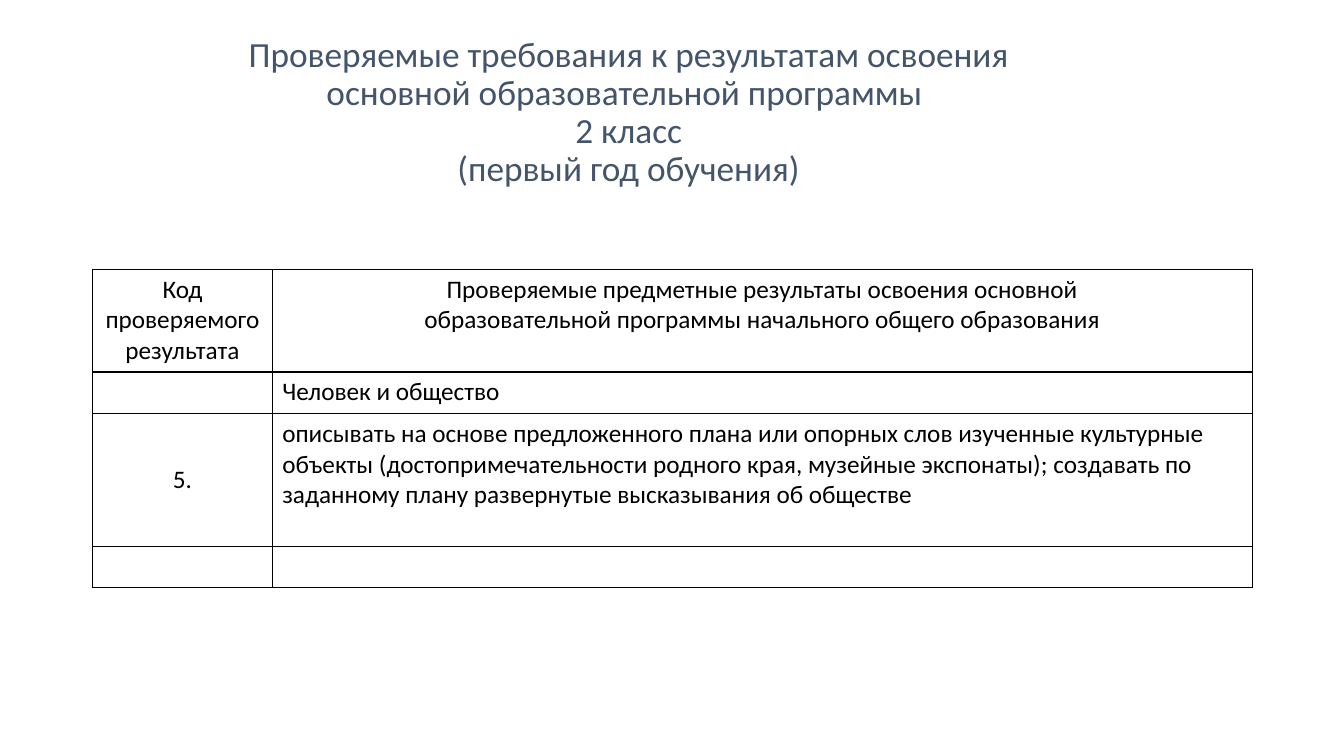
from dataclasses import dataclass

from lxml.etree import SubElement as Sub
from pptx import Presentation
from pptx.dml.color import RGBColor as Rgb
from pptx.enum.text import MSO_ANCHOR as Anchor, PP_ALIGN as Align
from pptx.oxml.ns import qn
from pptx.util import Inches, Pt

FONT = "Calibri"
COLORS = {"title": "44546A", "ink": "000000"}
COLS = [1.78, 9.72]
ROWS = [1.02, 0.41, 1.32, 0.41]
TITLE = (
    "Проверяемые требования к результатам освоения "
    "основной образовательной программы \v2 класс\v(первый год обучения)"
)


@dataclass
class Cell:
    text: str = ""
    align: Align = Align.LEFT
    anchor: Anchor = Anchor.TOP


GRID = [
    [
        Cell("Код\nпроверяемого\nрезультата", Align.CENTER),
        Cell(
            "Проверяемые предметные результаты освоения основной\n"
            "образовательной программы начального общего образования",
            Align.CENTER,
        ),
    ],
    [Cell(), Cell("Человек и общество")],
    [
        Cell("5.", Align.CENTER, Anchor.MIDDLE),
        Cell(
            "описывать на основе предложенного плана или опорных слов изученные "
            "культурные объекты (достопримечательности родного края, музейные "
            "экспонаты); создавать по заданному плану развернутые высказывания "
            "об обществе"
        ),
    ],
    [Cell(), Cell()],
]


def style(frame, size: float, color: str, align: Align) -> None:
    for para in frame.paragraphs:
        para.alignment = align
        font = para.font
        font.size, font.name, font.bold = Pt(size), FONT, False
        font.color.rgb = Rgb.from_string(COLORS[color])
        for run in para.runs:
            run.font.size, run.font.name, run.font.bold = Pt(size), FONT, False
            run.font.color.rgb = Rgb.from_string(COLORS[color])


def border(cell) -> None:
    props = cell._tc.get_or_add_tcPr()
    for side in ("lnL", "lnR", "lnT", "lnB"):
        line = Sub(props, qn(f"a:{side}"), w=str(Pt(1)))
        fill = Sub(line, qn("a:solidFill"))
        Sub(fill, qn("a:srgbClr"), val=COLORS["ink"])


def draw(cell, item: Cell) -> None:
    cell.text_frame.text = item.text
    cell.vertical_anchor = item.anchor
    style(cell.text_frame, 18, "ink", item.align)
    border(cell)
    cell.fill.background()


def main() -> None:
    deck = Presentation()
    deck.slide_width, deck.slide_height = Inches(13.33), Inches(7.5)
    slide = deck.slides.add_slide(deck.slide_layouts[6])

    # Title
    box = slide.shapes.add_textbox(
        Inches(2.26), Inches(0.4), Inches(7.95), Inches(1.45)
    )
    frame = box.text_frame
    frame.word_wrap = True
    frame.vertical_anchor = Anchor.MIDDLE
    frame.paragraphs[0].text = TITLE
    frame.paragraphs[0].line_spacing = 0.9
    style(frame, 25.2, "title", Align.CENTER)

    # Table of required results
    table = slide.shapes.add_table(
        len(ROWS), len(COLS), Inches(0.92), Inches(2.67),
        Inches(sum(COLS)), Inches(sum(ROWS)),
    ).table
    table.first_row = table.horz_banding = False
    for col, width in zip(table.columns, COLS):
        col.width = Inches(width)
    for row, height, items in zip(table.rows, ROWS, GRID):
        row.height = Inches(height)
        for cell, item in zip(row.cells, items):
            draw(cell, item)

    deck.save("out.pptx")


if __name__ == "__main__":
    main()
